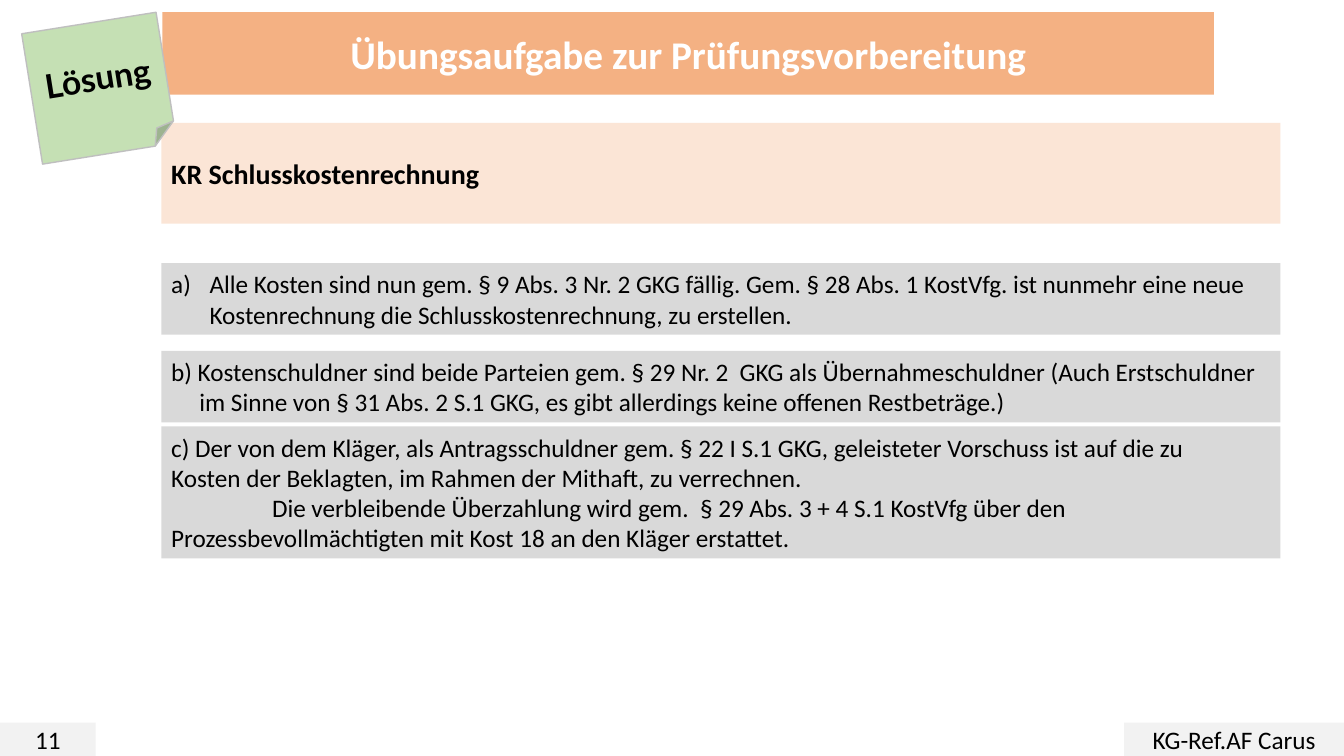
import pptx
import pptx.util
import pptx.dml.color
import pptx.enum.shapes
import pptx.enum.text
import lxml.etree
from pptx.oxml.ns import qn

Inches = pptx.util.Inches
Pt = pptx.util.Pt
SHAPE = pptx.enum.shapes.MSO_SHAPE
ALIGN = pptx.enum.text.PP_ALIGN


def color(value):
    return pptx.dml.color.RGBColor.from_string(value)


def style_block(block, text, fill, size, align=ALIGN.LEFT, bold=False, ink="000000", font="Calibri"):
    block.fill.solid()
    block.fill.fore_color.rgb = color(fill)
    block.line.fill.background()
    frame = block.text_frame
    frame.text = text
    frame.word_wrap = True
    frame.auto_size = pptx.enum.text.MSO_AUTO_SIZE.NONE
    frame.vertical_anchor = pptx.enum.text.MSO_ANCHOR.MIDDLE
    for paragraph in frame.paragraphs:
        paragraph.alignment = align
        for run in paragraph.runs:
            run.font.name = font
            run.font.size = Pt(size)
            run.font.bold = bold
            run.font.color.rgb = color(ink)
    return frame.paragraphs


deck = pptx.Presentation()
deck.slide_width = Inches(13.33)
deck.slide_height = Inches(7.5)
slide = deck.slides.add_slide(deck.slide_layouts[5])

title = slide.shapes.title
title.left, title.top = Inches(1.61), Inches(0.12)
title.width, title.height = Inches(10.43), Inches(0.82)
outline = lxml.etree.SubElement(title._element.spPr, qn("a:prstGeom"), prst="roundRect")
lxml.etree.SubElement(outline, qn("a:avLst"))
style_block(title, "Übungsaufgabe zur Prüfungsvorbereitung", "F4B183", 28, ALIGN.CENTER, True, "FFFFFF")

blocks = [
    (1.6, 1.22, 11.1, 1, "FBE5D6", 20, ALIGN.LEFT, True, "KR Schlusskostenrechnung"),
    (1.6, 2.61, 11.1, 0.71, "D9D9D9", 18, ALIGN.LEFT, False,
     "Alle Kosten sind nun gem. § 9 Abs. 3 Nr. 2 GKG fällig. Gem. § 28 Abs. 1 KostVfg. ist nunmehr "
     "eine neue Kostenrechnung die Schlusskostenrechnung, zu erstellen."),
    (1.6, 3.48, 11.1, 0.71, "D9D9D9", 18, ALIGN.LEFT, False,
     "b) Kostenschuldner sind beide Parteien gem. § 29 Nr. 2  GKG als Übernahmeschuldner (Auch Erstschuldner\n"
     "im Sinne von § 31 Abs. 2 S.1 GKG, es gibt allerdings keine offenen Restbeträge.)"),
    (1.6, 4.23, 11.1, 1.31, "D9D9D9", 18, ALIGN.LEFT, False,
     "c) Der von dem Kläger, als Antragsschuldner gem. § 22 I S.1 GKG, geleisteter Vorschuss ist auf die zu\v"
     "Kosten der Beklagten, im Rahmen der Mithaft, zu verrechnen.\n"
     "Die verbleibende Überzahlung wird gem.  § 29 Abs. 3 + 4 S.1 KostVfg über den "
     "Prozessbevollmächtigten mit Kost 18 an den Kläger erstattet."),
    (0, 7.17, 0.95, 0.33, "F2F2F2", 18, ALIGN.CENTER, False, "11"),
    (11.15, 7.17, 2.18, 0.33, "F2F2F2", 18, ALIGN.CENTER, False, "KG-Ref.AF Carus"),
]
block_paragraphs = []
for left, top, width, height, fill, size, align, bold, text in blocks:
    block = slide.shapes.add_shape(SHAPE.RECTANGLE, Inches(left), Inches(top), Inches(width), Inches(height))
    block.shadow.inherit = False
    block_paragraphs.append(style_block(block, text, fill, size, align, bold))

heading, due_costs, debtors, refund, page, author = block_paragraphs
indents = [(due_costs[0], 0.38, -0.38), (debtors[1], 0.28, 0), (refund[1], 0, 1)]
for paragraph, margin, first_line in indents:
    properties = paragraph._p.get_or_add_pPr()
    properties.set("marL", str(Inches(margin)))
    properties.set("indent", str(Inches(first_line)))
lxml.etree.SubElement(due_costs[0]._p.get_or_add_pPr(), qn("a:buAutoNum"), type="alphaLcParenR")

solution_note = slide.shapes.add_shape(SHAPE.FOLDED_CORNER, Inches(0.31), Inches(0.22), Inches(1.35), Inches(1.31))
solution_note.shadow.inherit = False
solution_note.rotation = 350.9
style_block(solution_note, "Lösung", "C5E0B4", 24, ALIGN.CENTER, True, font="Lato")
solution_note.line.color.rgb = color("BFBFBF")
solution_note.line.width = Pt(1)

deck.save("out.pptx")
